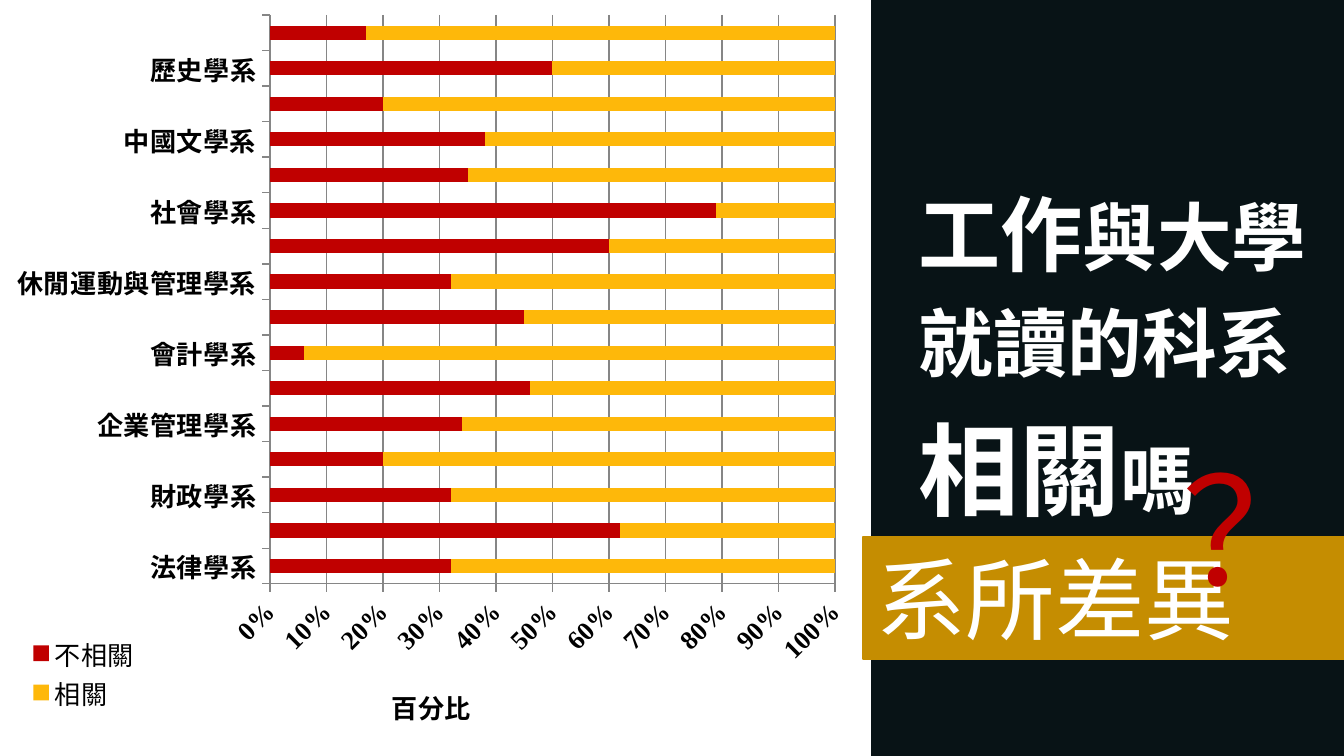
import dataclasses

import pptx
import pptx.chart.data
import pptx.dml.color
import pptx.enum.chart
import pptx.enum.text
import pptx.oxml
import pptx.oxml.ns
import pptx.util
from pptx.enum.shapes import MSO_SHAPE

EMU_PER_PX = 914400 / 134.4
PAGE_SIZE = (1344, 756)
CHART_FRAME = (0, 0, 863, 756)

# Every second bar carries a department name.
NAMED_DEPARTMENTS = [
    "法律學系", "財政學系", "企業管理學系", "會計學系",
    "休閒運動與管理學系", "社會學系", "中國文學系", "歷史學系",
]
UNRELATED = [32, 62, 32, 20, 34, 46, 6, 45, 32, 60, 79, 35, 38, 20, 50, 17]


@dataclasses.dataclass(frozen=True)
class Theme:
    dark: str = "081316"
    gold: str = "C58D01"
    yellow: str = "FEB80A"
    red: str = "C00000"
    white: str = "FFFFFF"
    black: str = "000000"
    grid: str = "868686"
    heading_font: str = "Noto Sans CJK SC"
    band_font: str = "Noto Sans CJK JP"
    chart_font: str = "Times New Roman"
    chart_size: int = 14
    band_size: int = 48
    mark_size: int = 80
    small: int = 40
    medium: int = 44
    large: int = 54


THEME = Theme()


def px(length):
    return pptx.util.Emu(round(length * EMU_PER_PX))


def rgb(code):
    return pptx.dml.color.RGBColor.from_string(code)


def east_asian(name):
    tag = pptx.oxml.ns.nsdecls("a")
    return pptx.oxml.parse_xml(f'<a:ea {tag} typeface="{name}"/>')


def add_span(para, text, size, font, color, bold=False):
    span = para.add_run()
    span.text = text
    span.font.size = pptx.util.Pt(size)
    span.font.bold = bold
    span.font.color.rgb = rgb(color)
    span.font.name = font
    span.font._element.append(east_asian(font))


def prepare_frame(box, anchor):
    frame = box.text_frame
    frame.word_wrap = True
    frame.auto_size = pptx.enum.text.MSO_AUTO_SIZE.NONE
    frame.vertical_anchor = anchor
    return frame


def format_para(para, before=0):
    para.alignment = pptx.enum.text.PP_ALIGN.LEFT
    para.line_spacing = 1.0
    para.space_before = pptx.util.Pt(before)


def add_block(page, frame, color, line_width):
    block = page.shapes.add_shape(MSO_SHAPE.RECTANGLE, *map(px, frame))
    block.shadow.inherit = False
    block.fill.solid()
    block.fill.fore_color.rgb = rgb(color)
    block.line.color.rgb = rgb(color)
    block.line.width = pptx.util.Pt(line_width)
    return block


def fill_title(title, frame):
    title.left, title.top, title.width, title.height = map(px, frame)
    text = prepare_frame(title, pptx.enum.text.MSO_ANCHOR.TOP)
    lines = [
        (0, [("工作", THEME.medium), ("與大學", THEME.small)]),
        (8, [("就讀的科系", THEME.small)]),
        (11, [("相關", THEME.large), ("嗎", THEME.small)]),
    ]
    for index, (before, spans) in enumerate(lines):
        para = text.add_paragraph() if index else text.paragraphs[0]
        format_para(para, before)
        for words, size in spans:
            add_span(para, words, size, THEME.heading_font, THEME.white, True)


def add_band(page, frame):
    band = add_block(page, frame, THEME.gold, 0.75)
    text = prepare_frame(band, pptx.enum.text.MSO_ANCHOR.MIDDLE)
    para = text.paragraphs[0]
    format_para(para)
    add_span(para, "系所差異", THEME.band_size, THEME.band_font, THEME.white)


def add_question_mark(page, frame):
    box = page.shapes.add_textbox(*map(px, frame))
    text = prepare_frame(box, pptx.enum.text.MSO_ANCHOR.TOP)
    para = text.paragraphs[0]
    format_para(para)
    add_span(para, "？", THEME.mark_size, THEME.heading_font, THEME.red)


def style_chart_font(font, bold):
    font.size = pptx.util.Pt(THEME.chart_size)
    font.bold = bold
    font.color.rgb = rgb(THEME.black)
    font.name = THEME.chart_font


def place_part(part, left, top, width=None, height=None, inner=False):
    """Give a chart part a fixed position, in px inside the chart frame."""
    for old in part.xpath("c:layout"):
        part.remove(old)
    chart_width, chart_height = CHART_FRAME[2:]
    target = '<c:layoutTarget val="inner"/>' if inner else ""
    values = [("x", left / chart_width), ("y", top / chart_height)]
    if width:
        values += [("w", width / chart_width), ("h", height / chart_height)]
    modes = '<c:xMode val="edge"/><c:yMode val="edge"/>'
    sizes = "".join(f'<c:{key} val="{value:.4f}"/>' for key, value in values)
    layout = pptx.oxml.parse_xml(
        f'<c:layout {pptx.oxml.ns.nsdecls("c")}><c:manualLayout>'
        f"{target}{modes}{sizes}</c:manualLayout></c:layout>")
    part.xpath("c:overlay | c:barChart")[0].addprevious(layout)


def style_axis(axis):
    axis.major_tick_mark = pptx.enum.chart.XL_TICK_MARK.OUTSIDE
    axis.minor_tick_mark = pptx.enum.chart.XL_TICK_MARK.NONE
    axis.format.line.color.rgb = rgb(THEME.grid)
    style_chart_font(axis.tick_labels.font, True)


def style_value_axis(axis):
    style_axis(axis)
    axis.minimum_scale = 0
    axis.maximum_scale = 1
    axis.major_unit = 0.1
    axis.has_major_gridlines = True
    axis.major_gridlines.format.line.color.rgb = rgb(THEME.grid)
    axis.tick_labels.number_format = "0%"
    axis.tick_labels.number_format_is_linked = False
    axis.has_title = True
    span = axis.axis_title.text_frame.paragraphs[0].add_run()
    span.text = "百分比"
    style_chart_font(span.font, True)


def add_department_chart(page):
    data = pptx.chart.data.CategoryChartData()
    for name in NAMED_DEPARTMENTS:
        data.add_category(name)
        data.add_category("")
    data.add_series("不相關", UNRELATED)
    data.add_series("相關", [100 - value for value in UNRELATED])
    kind = pptx.enum.chart.XL_CHART_TYPE.BAR_STACKED_100
    chart = page.shapes.add_chart(kind, *map(px, CHART_FRAME), data).chart
    chart.has_title = False
    style_chart_font(chart.font, False)

    plot = chart.plots[0]
    plot.vary_by_categories = False
    plot.gap_width = 150
    plot.overlap = 100
    for series, color in zip(plot.series, (THEME.red, THEME.yellow)):
        series.format.fill.solid()
        series.format.fill.fore_color.rgb = rgb(color)

    style_axis(chart.category_axis)
    style_value_axis(chart.value_axis)
    chart.has_legend = True
    chart.legend.position = pptx.enum.chart.XL_LEGEND_POSITION.RIGHT
    chart.legend.include_in_layout = True
    style_chart_font(chart.legend.font, False)

    root = chart._chartSpace
    place_part(root.xpath(".//c:plotArea")[0], 270, 15, 565, 569, inner=True)
    place_part(root.xpath(".//c:valAx/c:title")[0], 387, 680)
    place_part(root.xpath(".//c:legend")[0], 24, 633, 120, 80)
    root.xpath(".//c:valAx/c:txPr/a:bodyPr")[0].set("rot", "-2700000")
    for latin in root.xpath(".//a:latin"):
        latin.addnext(east_asian(THEME.band_font))


def main():
    deck = pptx.Presentation()
    deck.slide_width, deck.slide_height = map(px, PAGE_SIZE)
    page = deck.slides.add_slide(deck.slide_layouts[5])
    panel = add_block(page, (873, 0, 471, 756), THEME.dark, 2)
    title = page.shapes.title
    fill_title(title, (905, 177, 487, 159))
    panel.element.addnext(title.element)
    add_band(page, (863, 537, 481, 122))
    add_question_mark(page, (1169, 431, 169, 137))
    add_department_chart(page)
    deck.save("out.pptx")


if __name__ == "__main__":
    main()
